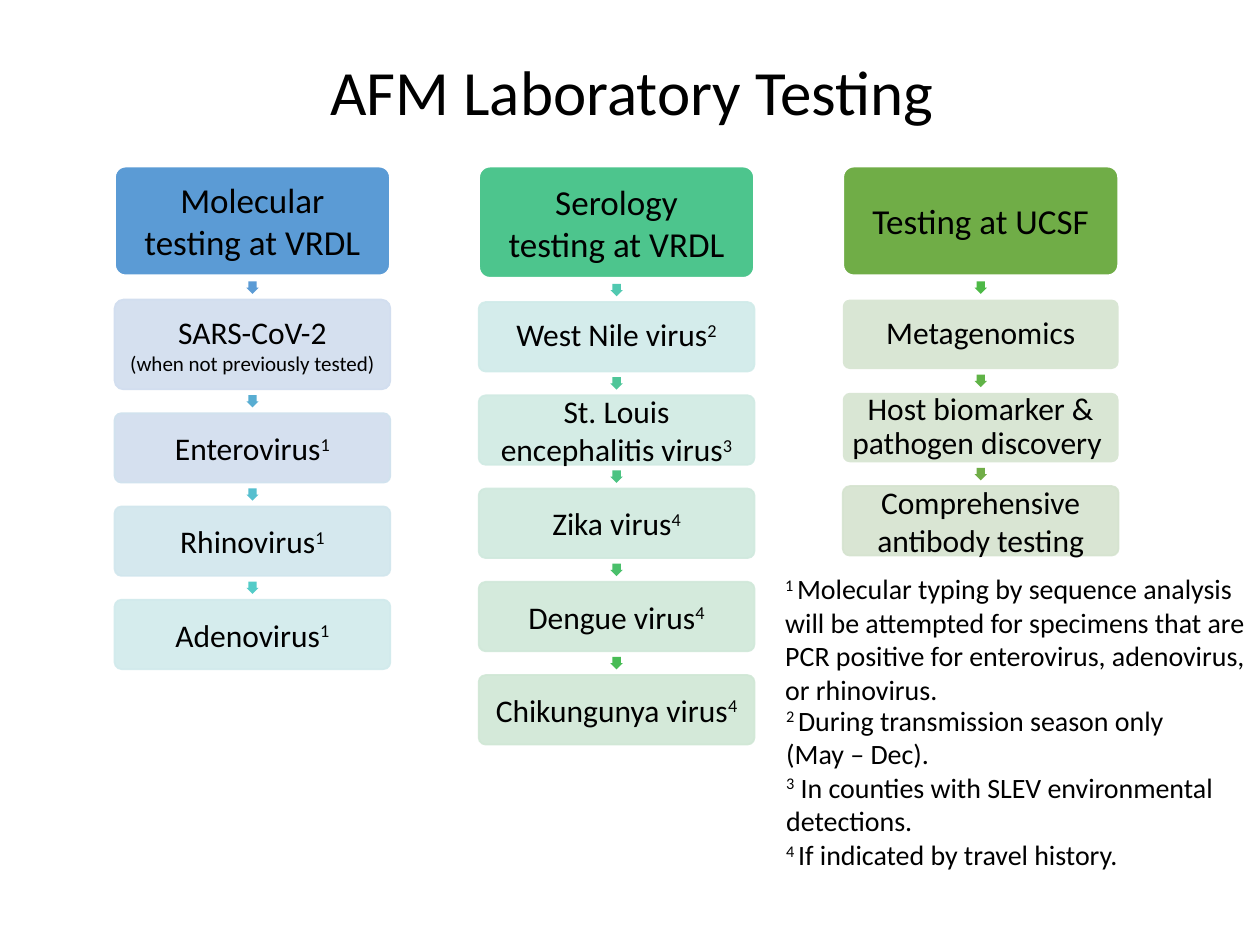
from lxml import etree
from pptx import Presentation
from pptx.dml.color import RGBColor
from pptx.enum import shapes, text
from pptx.oxml import ns
from pptx.util import Cm, Pt

BLACK = RGBColor(0x00, 0x00, 0x00)
WHITE = RGBColor(0xFF, 0xFF, 0xFF)
BLUE = RGBColor(0x5B, 0x9B, 0xD5)
SKY = RGBColor(0x58, 0xAD, 0xD2)
CYAN = RGBColor(0x56, 0xBF, 0xCF)
TURQUOISE = RGBColor(0x53, 0xCC, 0xC8)
EMERALD = RGBColor(0x4D, 0xC5, 0x8D)
AQUA = RGBColor(0x51, 0xC9, 0xB0)
SEA = RGBColor(0x4F, 0xC6, 0x99)
JADE = RGBColor(0x4C, 0xC3, 0x82)
FERN = RGBColor(0x4A, 0xC0, 0x6B)
GRASS = RGBColor(0x48, 0xBC, 0x55)
LEAF = RGBColor(0x4D, 0xB9, 0x46)
MOSS = RGBColor(0x60, 0xB3, 0x47)
GREEN = RGBColor(0x70, 0xAD, 0x47)
PALE_BLUE = RGBColor(0xD5, 0xE0, 0xEF)
PALE_SKY = RGBColor(0xD1, 0xE6, 0xED)
PALE_CYAN = RGBColor(0xD1, 0xEA, 0xEC)
PALE_AQUA = RGBColor(0xD0, 0xEB, 0xE9)
PALE_SEA = RGBColor(0xD0, 0xEA, 0xE3)
PALE_JADE = RGBColor(0xD0, 0xE9, 0xDE)
PALE_FERN = RGBColor(0xD0, 0xE8, 0xD9)
PALE_GRASS = RGBColor(0xD0, 0xE7, 0xD5)
PALE_GREEN = RGBColor(0xD9, 0xE6, 0xD4)
PALE_MOSS = RGBColor(0xD5, 0xE3, 0xCF)
BLUE_EDGE = RGBColor(0xD2, 0xDE, 0xEF)
SKY_EDGE = RGBColor(0xD1, 0xE2, 0xEE)

# Column grid, in centimetres
LEFT, TOP, PITCH, WIDTH = 2.31, 3.35, 7.34, 5.56
GAP, ARROW, BOX_HEIGHT = 0.48, 0.25, 1.4

# Heading, colour, height, then boxes: arrow colour, text, fill, edge, height, spacing.
# Text between carets is superscript.
COLUMNS = [
    (["Molecular", "testing at VRDL"], BLUE, 2.21, [
        (BLUE, ["SARS-CoV-2", "(when not previously tested)"], PALE_BLUE, BLUE_EDGE, 1.81, 1),
        (SKY, ["Enterovirus^1"], PALE_BLUE, SKY_EDGE, BOX_HEIGHT, 1),
        (CYAN, ["Rhinovirus^1"], PALE_SKY, PALE_SKY, BOX_HEIGHT, 1),
        (TURQUOISE, ["Adenovirus^1"], PALE_CYAN, PALE_CYAN, BOX_HEIGHT, 1),
    ]),
    (["Serology", "testing at VRDL"], EMERALD, 2.26, [
        (AQUA, ["West Nile virus^2"], PALE_AQUA, PALE_AQUA, BOX_HEIGHT, 0.9),
        (SEA, ["St. Louis encephalitis virus^3"], PALE_SEA, PALE_SEA, BOX_HEIGHT, 1),
        (JADE, ["Zika virus^4"], PALE_JADE, PALE_JADE, BOX_HEIGHT, 1),
        (FERN, ["Dengue virus^4"], PALE_FERN, PALE_FERN, BOX_HEIGHT, 1),
        (GRASS, ["Chikungunya virus^4"], PALE_GRASS, PALE_GRASS, BOX_HEIGHT, 1),
    ]),
    (["Testing at UCSF"], GREEN, 2.21, [
        (LEAF, ["Metagenomics"], PALE_GREEN, None, BOX_HEIGHT, 0.9),
        (MOSS, ["Host biomarker & pathogen discovery "], PALE_GREEN, None, BOX_HEIGHT, 0.9),
        (GREEN, ["Comprehensive antibody testing"], PALE_MOSS, PALE_MOSS, BOX_HEIGHT, 1),
    ]),
]


class SlideBuilder:
    """Holds the text style and the slide being built."""

    font_name = "Calibri"
    text_color = BLACK

    def __init__(self, slide):
        self.slide = slide

    def style(self, paragraph, size, align, spacing=1):
        paragraph.alignment = align
        paragraph.line_spacing = spacing
        paragraph.space_before = Pt(0)
        paragraph.font.name = self.font_name
        paragraph.font.size = Pt(size)
        paragraph.font.color.rgb = self.text_color

    def fill_text(self, frame, lines, sizes, align, spacing=1):
        for index, (line, size) in enumerate(zip(lines, sizes)):
            paragraph = frame.add_paragraph() if index else frame.paragraphs[0]
            self.style(paragraph, size, align, spacing)
            for part, words in enumerate(line.split("^")):
                if words:
                    run = paragraph.add_run()
                    run.text = words
                    if part % 2:
                        run._r.get_or_add_rPr().set("baseline", "30000")

    def title(self, words, left, top, width, height):
        shape = self.slide.shapes.title
        shape.left, shape.top = Cm(left), Cm(top)
        shape.width, shape.height = Cm(width), Cm(height)
        shape.text_frame.vertical_anchor = text.MSO_ANCHOR.MIDDLE
        self.fill_text(shape.text_frame, [words], [36], text.PP_ALIGN.CENTER, 0.9)

    def shape(self, kind, left, top, width, height, fill):
        shape = self.slide.shapes.add_shape(kind, Cm(left), Cm(top), Cm(width), Cm(height))
        shape.shadow.inherit = False
        shape.fill.solid()
        shape.fill.fore_color.rgb = fill
        shape.line.fill.background()
        return shape

    def box(self, lines, sizes, left, top, height, fill, edge, edge_width=1, spacing=1):
        shape = self.shape(shapes.MSO_SHAPE.ROUNDED_RECTANGLE, left, top, WIDTH, height, fill)
        shape.adjustments[0] = 0.1
        if edge is not None:
            shape.line.color.rgb = edge
            shape.line.width = Pt(edge_width)
        if edge == fill:  # boxes edged in their own colour are slightly transparent
            for color in shape._element.spPr.iter(ns.qn("a:srgbClr")):
                etree.SubElement(color, ns.qn("a:alpha"), val="90000")
        frame = shape.text_frame
        frame.word_wrap = True
        frame.vertical_anchor = text.MSO_ANCHOR.MIDDLE
        frame.margin_left = frame.margin_right = Cm(0.12)
        frame.margin_top = frame.margin_bottom = Cm(0.12)
        self.fill_text(frame, lines, sizes, text.PP_ALIGN.CENTER, spacing)

    def arrow(self, center, top, fill):
        shape = self.shape(shapes.MSO_SHAPE.RIGHT_ARROW, center - ARROW / 2, top,
                           ARROW, ARROW, fill)
        shape.rotation = 90
        shape.adjustments[0] = 0.667
        shape.adjustments[1] = 0.5

    def note(self, lines, left, top, width, height):
        shape = self.slide.shapes.add_textbox(Cm(left), Cm(top), Cm(width), Cm(height))
        shape.text_frame.word_wrap = True
        self.fill_text(shape.text_frame, lines, [16] * len(lines), text.PP_ALIGN.LEFT)


def main():
    presentation = Presentation()
    presentation.slide_width, presentation.slide_height = Cm(25.4), Cm(19.05)
    builder = SlideBuilder(presentation.slides.add_slide(presentation.slide_layouts[5]))

    builder.title("AFM Laboratory Testing", 0.56, 0.64, 24.36, 2.54)

    # Test columns
    for index, (heading, color, heading_height, boxes) in enumerate(COLUMNS):
        left = LEFT + index * PITCH
        builder.box(heading, [20, 20], left, TOP, heading_height, color, WHITE, 1.5)
        bottom = TOP + heading_height
        for arrow_color, lines, fill, edge, height, spacing in boxes:
            builder.arrow(left + WIDTH / 2, bottom + (GAP - ARROW) / 2, arrow_color)
            builder.box(lines, [18, 12], left, bottom + GAP, height, fill, edge,
                        spacing=spacing)
            bottom += GAP + height

    # Footnotes
    builder.note([
        "^2 ^During transmission season only",
        "(May – Dec).",
        "^3^ In counties with SLEV environmental detections.",
        "^4 ^If indicated by travel history.",
    ], 15.6, 14.05, 9.6, 3.68)
    builder.note([
        "^1 ^Molecular typing by sequence analysis will be attempted for specimens "
        "that are PCR positive for enterovirus, adenovirus, or rhinovirus.",
    ], 15.58, 11.4, 9.82, 3)

    presentation.save("out.pptx")


if __name__ == "__main__":
    main()
